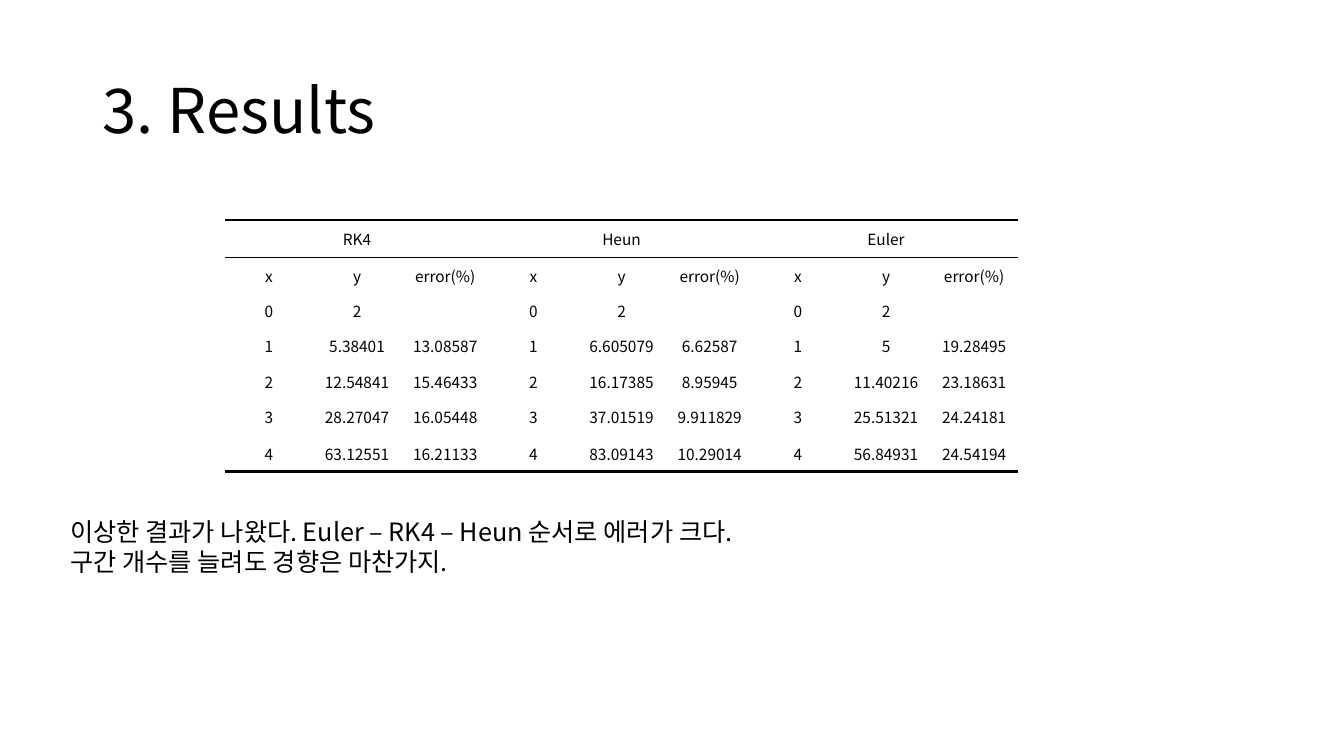
from dataclasses import dataclass

import lxml.etree
import pptx
import pptx.dml.color
import pptx.enum.text
import pptx.oxml.ns
import pptx.util

Inches = pptx.util.Inches
FONT = "Noto Sans CJK KR"
BLACK = "000000"
THICK, THIN = 2, 0.5
TABLE_LEFT, TABLE_TOP, TABLE_WIDTH, TABLE_HEIGHT = 2.23, 2.18, 7.87, 2.5
EDGE_ROW_HEIGHT = 0.37


@dataclass
class TextBlock:
    left: float
    top: float
    width: float
    height: float
    size: int
    lines: list[str]
    anchor: pptx.enum.text.MSO_ANCHOR
    spacing: float


@dataclass
class Method:
    name: str
    values: list[str]
    errors: list[str]


BLOCKS = [
    TextBlock(0.92, 0.4, 11.5, 1.45, 44, ["3. Results"],
              pptx.enum.text.MSO_ANCHOR.MIDDLE, 0.9),
    TextBlock(0.6, 5.07, 11.6, 0.71, 18,
              ["이상한 결과가 나왔다. Euler – RK4 – Heun 순서로 에러가 크다.",
               "구간 개수를 늘려도 경향은 마찬가지."],
              pptx.enum.text.MSO_ANCHOR.TOP, 1.0),
]

METHODS = [
    Method("RK4", ["2", "5.38401", "12.54841", "28.27047", "63.12551"],
           ["", "13.08587", "15.46433", "16.05448", "16.21133"]),
    Method("Heun", ["2", "6.605079", "16.17385", "37.01519", "83.09143"],
           ["", "6.62587", "8.95945", "9.911829", "10.29014"]),
    Method("Euler", ["2", "5", "11.40216", "25.51321", "56.84931"],
           ["", "19.28495", "23.18631", "24.24181", "24.54194"]),
]


def color(value: str) -> pptx.dml.color.RGBColor:
    return pptx.dml.color.RGBColor.from_string(value)


def add_element(parent, tag: str, **attributes: str):
    return lxml.etree.SubElement(parent, pptx.oxml.ns.qn(tag), attributes)


def style_paragraph(para, size: int) -> None:
    para.font.name = FONT
    para.font.size = pptx.util.Pt(size)
    para.font.bold = False
    para.font.color.rgb = color(BLACK)
    for span in para.runs:
        add_element(span.font._element, "a:ea", typeface=FONT)


def add_text(page, block: TextBlock) -> None:
    box = page.shapes.add_textbox(Inches(block.left), Inches(block.top),
                                  Inches(block.width), Inches(block.height))
    frame = box.text_frame
    frame.word_wrap = True
    frame.vertical_anchor = block.anchor
    frame.text = "\n".join(block.lines)
    for para in frame.paragraphs:
        para.line_spacing = block.spacing
        style_paragraph(para, block.size)


def set_borders(cell, top: float, bottom: float) -> None:
    properties = cell._tc.get_or_add_tcPr()
    for side, width in (("L", 0), ("R", 0), ("T", top), ("B", bottom)):
        line = add_element(properties, f"a:ln{side}", w=str(pptx.util.Pt(width)))
        if width:
            fill = add_element(line, "a:solidFill")
            add_element(fill, "a:srgbClr", val=BLACK)
        else:
            add_element(line, "a:noFill")


def fill_cell(cell, text: str, top: float, bottom: float) -> None:
    cell.text = text
    cell.vertical_anchor = pptx.enum.text.MSO_ANCHOR.MIDDLE
    cell.margin_left = cell.margin_right = cell.margin_top = Inches(0.01)
    cell.margin_bottom = 0
    para = cell.text_frame.paragraphs[0]
    para.alignment = pptx.enum.text.PP_ALIGN.CENTER
    style_paragraph(para, 11)
    if not text:
        add_element(para._p, "a:endParaRPr", sz="1100")
    set_borders(cell, top, bottom)
    cell.fill.background()


def table_rows(methods: list[Method]) -> list[list[str]]:
    rows: list[list[str]] = [[], []]
    for method in methods:
        rows[0] += [method.name, "", ""]
        rows[1] += ["x", "y", "error(%)"]
    for step in range(len(methods[0].values)):
        rows.append([text for method in methods
                     for text in (str(step), method.values[step], method.errors[step])])
    return rows


def add_results(page, methods: list[Method]) -> None:
    rows = table_rows(methods)
    last = len(rows) - 1
    column_count = len(rows[0])
    table = page.shapes.add_table(
        len(rows), column_count, Inches(TABLE_LEFT), Inches(TABLE_TOP),
        Inches(TABLE_WIDTH), Inches(TABLE_HEIGHT)).table
    table.first_row = False
    table.horz_banding = False
    for column in table.columns:
        column.width = Inches(TABLE_WIDTH / column_count)
    inner_height = (TABLE_HEIGHT - 2 * EDGE_ROW_HEIGHT) / (len(rows) - 2)
    rules = {0: THICK, 1: THIN, last + 1: THICK}
    for index, texts in enumerate(rows):
        height = EDGE_ROW_HEIGHT if index in (0, last) else inner_height
        table.rows[index].height = Inches(height)
        for column_index, text in enumerate(texts):
            fill_cell(table.cell(index, column_index), text,
                      rules.get(index, 0), rules.get(index + 1, 0))
    for start in range(0, column_count, 3):
        table.cell(0, start).merge(table.cell(0, start + 2))


def main() -> None:
    deck = pptx.Presentation()
    deck.slide_width = Inches(13.33)
    deck.slide_height = Inches(7.5)
    page = deck.slides.add_slide(deck.slide_layouts[6])
    add_results(page, METHODS)
    for block in BLOCKS:
        add_text(page, block)
    deck.save("out.pptx")


if __name__ == "__main__":
    main()
